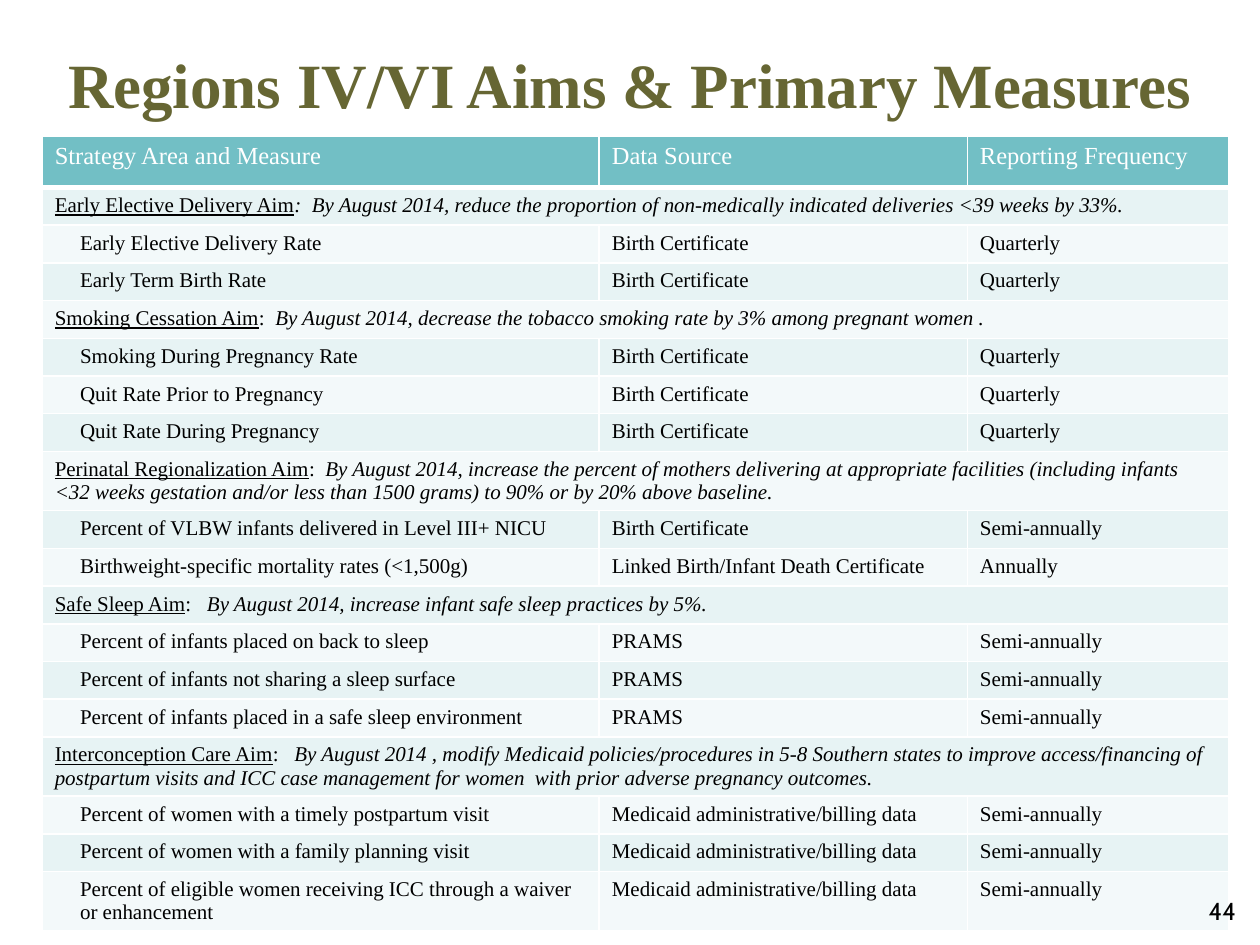
from dataclasses import dataclass

from lxml import etree
from pptx import Presentation
from pptx import util as u
from pptx.dml.color import RGBColor
from pptx.enum import text
from pptx.oxml import ns


@dataclass(frozen=True)
class Theme:
    serif: str = "Times New Roman"
    sans: str = "Cabin"
    olive: str = "666633"
    black: str = "000000"
    white: str = "FFFFFF"
    teal: str = "72BFC5"
    bands: tuple = ("F3F9FA", "E7F3F4")
    title_size: int = 36
    header_size: int = 14
    body_size: int = 12
    rule: int = 1
    header_rule: int = 3


@dataclass(frozen=True)
class Aim:
    name: str
    separator: str
    goal: str
    height: float = 0.76


@dataclass(frozen=True)
class Measure:
    name: str
    source: str
    frequency: str
    height: float = 0.76


HEADINGS = ("Strategy Area and Measure", "Data Source", "Reporting Frequency")
HEADING_HEIGHT = 1.03
COLUMN_WIDTHS = (11.23, 7.42, 5.28)
TWO_LINES = 1.19
BIRTH = "Birth Certificate"
BILLING = "Medicaid administrative/billing data"
SURVEY = "PRAMS"

ROWS = [
    Aim("Early Elective Delivery Aim", "",
        ":  By August 2014, reduce the proportion of non-medically indicated "
        "deliveries <39 weeks by 33%."),
    Measure("Early Elective Delivery Rate", BIRTH, "Quarterly"),
    Measure("Early Term Birth Rate", BIRTH, "Quarterly"),
    Aim("Smoking Cessation Aim", ":  ",
        "By August 2014, decrease the tobacco smoking rate by 3% among pregnant women ."),
    Measure("Smoking During Pregnancy Rate", BIRTH, "Quarterly"),
    Measure("Quit Rate Prior to Pregnancy", BIRTH, "Quarterly"),
    Measure("Quit Rate During Pregnancy", BIRTH, "Quarterly"),
    Aim("Perinatal Regionalization Aim", ":  ",
        "By August 2014, increase the percent of mothers delivering at appropriate "
        "facilities (including infants <32 weeks gestation and/or less than 1500 grams) "
        "to 90% or by 20% above baseline.", TWO_LINES),
    Measure("Percent of VLBW infants delivered in Level III+ NICU", BIRTH, "Semi-annually"),
    Measure("Birthweight-specific mortality rates (<1,500g)",
            "Linked Birth/Infant Death Certificate", "Annually"),
    Aim("Safe Sleep Aim", ":  ",
        " By August 2014, increase infant safe sleep practices by 5%."),
    Measure("Percent of infants placed on back to sleep", SURVEY, "Semi-annually"),
    Measure("Percent of infants not sharing a sleep surface", SURVEY, "Semi-annually"),
    Measure("Percent of infants placed in a safe sleep environment", SURVEY, "Semi-annually"),
    Aim("Interconception Care Aim", ":   ",
        "By August 2014 , modify Medicaid policies/procedures in 5-8 Southern states to "
        "improve access/financing of postpartum visits and ICC case management for women  "
        "with prior adverse pregnancy outcomes.", TWO_LINES),
    Measure("Percent of women with a timely postpartum visit", BILLING, "Semi-annually"),
    Measure("Percent of women with a family planning visit", BILLING, "Semi-annually"),
    Measure("Percent of eligible women receiving ICC through a waiver or enhancement",
            BILLING, "Semi-annually", TWO_LINES),
]


class SlideBuilder:
    def __init__(self, slide, theme):
        self.slide = slide
        self.theme = theme

    def set_font(self, paragraph, size, color, bold=False, name=None):
        font = paragraph.font
        font.name = name or self.theme.serif
        font.size = u.Pt(size)
        font.bold = bold
        font.color.rgb = RGBColor.from_string(color)

    def title(self, wording):
        title = self.slide.shapes.title
        title.left, title.top = u.Cm(0), u.Cm(0.08)
        title.width, title.height = u.Cm(25.4), u.Cm(3.18)
        title.text_frame.vertical_anchor = text.MSO_ANCHOR.MIDDLE
        heading = title.text_frame.paragraphs[0]
        heading.text = wording
        heading.alignment = text.PP_ALIGN.CENTER
        self.set_font(heading, self.theme.title_size, self.theme.olive, bold=True)

    def page_number(self, number):
        box = self.slide.shapes.add_textbox(u.Cm(19.25), u.Cm(17.93), u.Cm(5.92), u.Cm(1.32))
        box.text_frame.word_wrap = True
        page = box.text_frame.paragraphs[0]
        page.text = number
        page.alignment = text.PP_ALIGN.RIGHT
        self.set_font(page, self.theme.header_size, self.theme.black, name=self.theme.sans)

    def paint_cell(self, cell, fill, bottom_rule):
        properties = cell._tc.get_or_add_tcPr()
        for side in "LRTB":
            width = bottom_rule if side == "B" else self.theme.rule
            line = etree.SubElement(properties, ns.qn(f"a:ln{side}"), w=str(u.Pt(width)))
            solid = etree.SubElement(line, ns.qn("a:solidFill"))
            etree.SubElement(solid, ns.qn("a:srgbClr"), val=self.theme.white)
        cell.fill.solid()
        cell.fill.fore_color.rgb = RGBColor.from_string(fill)

    def write_cell(self, cell, wording, size, color):
        paragraph = cell.text_frame.paragraphs[0]
        paragraph.text = wording
        self.set_font(paragraph, size, color)
        return paragraph

    def write_aim(self, cells, aim):
        cells[0].merge(cells[-1])
        paragraph = self.write_cell(cells[0], "", self.theme.body_size, self.theme.black)
        name = paragraph.add_run()
        name.text = aim.name
        name.font.underline = True
        if aim.separator:
            paragraph.add_run().text = aim.separator
        goal = paragraph.add_run()
        goal.text = aim.goal
        goal.font.italic = True

    def write_measure(self, cells, measure):
        wordings = (measure.name, measure.source, measure.frequency)
        for cell, wording in zip(cells, wordings):
            self.write_cell(cell, wording, self.theme.body_size, self.theme.black)
        indent = cells[0].text_frame.paragraphs[0]._p.get_or_add_pPr()
        indent.set("marL", str(u.Cm(0.51)))
        indent.set("indent", "0")

    def measures_table(self, headings, rows):
        theme = self.theme
        heights = [HEADING_HEIGHT] + [row.height for row in rows]
        table = self.slide.shapes.add_table(
            len(heights), len(headings), u.Cm(0.85), u.Cm(2.75),
            u.Cm(sum(COLUMN_WIDTHS)), u.Cm(sum(heights))).table
        for column, width in zip(table.columns, COLUMN_WIDTHS):
            column.width = u.Cm(width)
        for index, height in enumerate(heights):
            table.rows[index].height = u.Cm(height)
            cells = list(table.rows[index].cells)
            is_header = index == 0
            for cell in cells:
                self.paint_cell(cell, theme.teal if is_header else theme.bands[index % 2],
                                theme.header_rule if is_header else theme.rule)
            if is_header:
                for cell, heading in zip(cells, headings):
                    self.write_cell(cell, heading, theme.header_size, theme.white)
            elif isinstance(rows[index - 1], Aim):
                self.write_aim(cells, rows[index - 1])
            else:
                self.write_measure(cells, rows[index - 1])


def main():
    presentation = Presentation()
    presentation.slide_width, presentation.slide_height = u.Cm(25.4), u.Cm(19.05)
    title_only = presentation.slide_layouts[5]
    builder = SlideBuilder(presentation.slides.add_slide(title_only), Theme())
    builder.title("Regions IV/VI Aims & Primary Measures")
    builder.measures_table(HEADINGS, ROWS)
    builder.page_number("44")
    presentation.save("out.pptx")


if __name__ == "__main__":
    main()
